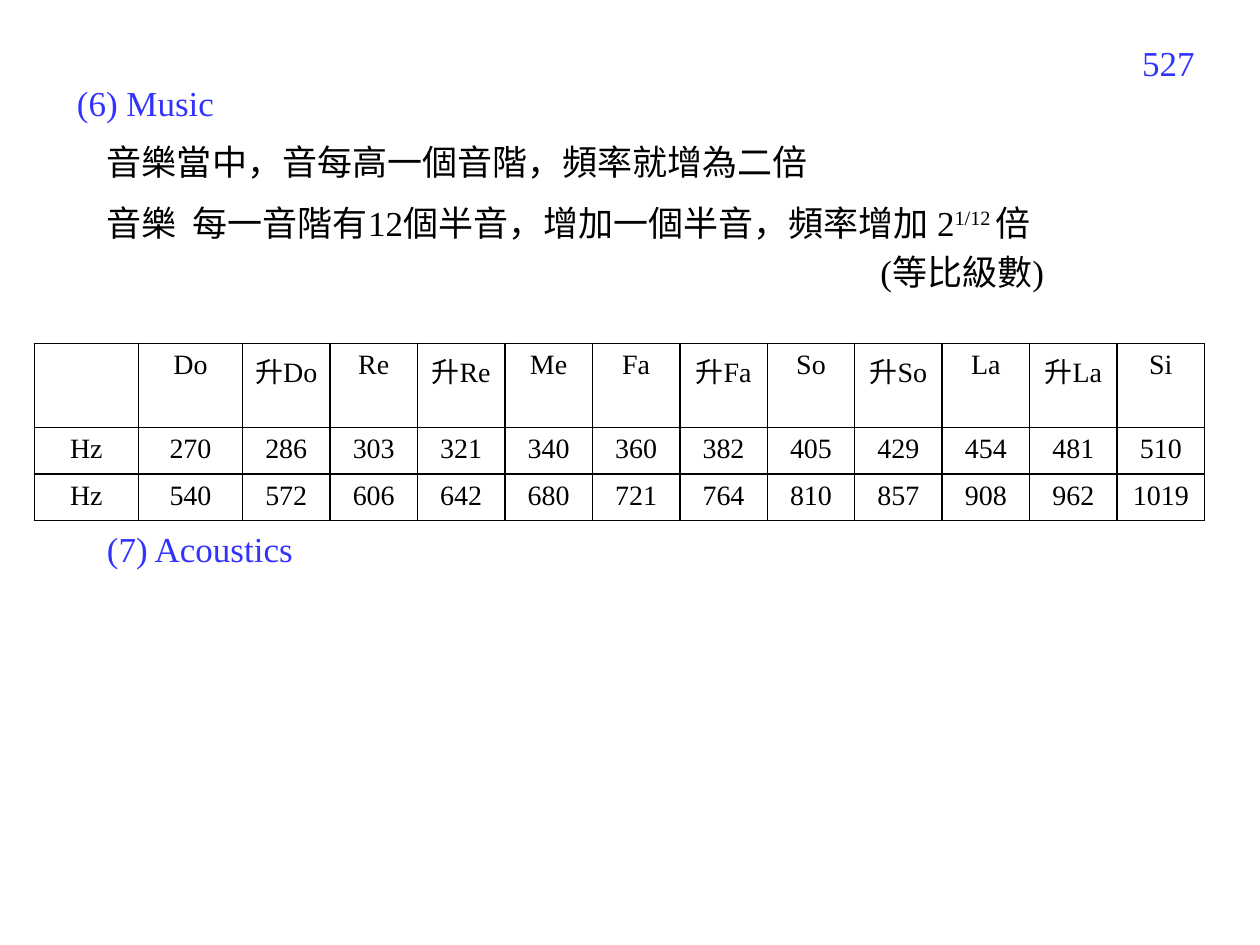
from dataclasses import dataclass

import pptx
import pptx.dml.color
import pptx.enum.text
import pptx.oxml
import pptx.oxml.ns
import pptx.util

Pt = pptx.util.Pt
Align = pptx.enum.text.PP_ALIGN
Anchor = pptx.enum.text.MSO_ANCHOR

FONT = "Times New Roman"
BLUE, BLACK = "3333FF", "000000"


@dataclass
class Note:
    """A text block; each run is its wording and its baseline shift in percent."""
    left: float
    top: float
    width: float
    height: float
    runs: list[tuple[str, int]]
    color: str = BLACK
    align: Align = Align.LEFT
    anchor: Anchor = Anchor.TOP


def rgb(color: str) -> pptx.dml.color.RGBColor:
    return pptx.dml.color.RGBColor.from_string(color)


def add_run(paragraph, wording: str, size: float, color: str, baseline: int = 0) -> None:
    run = paragraph.add_run()
    run.text = wording
    run.font.name = FONT
    run.font.size = Pt(size)
    run.font.color.rgb = rgb(color)
    if baseline:
        run.font._element.set("baseline", str(baseline * 1000))


def write_note(shape, note: Note) -> None:
    shape.left, shape.top = Pt(note.left), Pt(note.top)
    shape.width, shape.height = Pt(note.width), Pt(note.height)
    frame = shape.text_frame
    frame.word_wrap = True
    frame.auto_size = pptx.enum.text.MSO_AUTO_SIZE.NONE
    frame.vertical_anchor = note.anchor
    paragraph = frame.paragraphs[0]
    paragraph.alignment = note.align
    for wording, baseline in note.runs:
        add_run(paragraph, wording, 20, note.color, baseline)


def add_note(slide, note: Note) -> None:
    write_note(slide.shapes.add_textbox(0, 0, 0, 0), note)


def outline_cell(cell, color: str, width: float) -> None:
    properties = cell._tc.get_or_add_tcPr()
    for position, side in enumerate(("lnL", "lnR", "lnT", "lnB")):
        properties.insert(position, pptx.oxml.parse_xml(
            f'<a:{side} {pptx.oxml.ns.nsdecls("a")} w="{int(Pt(width))}">'
            f'<a:solidFill><a:srgbClr val="{color}"/></a:solidFill></a:{side}>'))


def add_grid(slide, left: float, top: float, widths: list[float],
             row_height: float, rows: list[list]) -> None:
    table = slide.shapes.add_table(
        len(rows), len(widths), Pt(left), Pt(top),
        Pt(sum(widths)), Pt(row_height * len(rows))).table
    table.first_row = table.horz_banding = False
    for column, width in zip(table.columns, widths):
        column.width = Pt(width)
    for row_index, row in enumerate(rows):
        table.rows[row_index].height = Pt(row_height)
        for column_index, entry in enumerate(row):
            cell = table.cell(row_index, column_index)
            cell.fill.background()
            outline_cell(cell, BLACK, 1)
            paragraph = cell.text_frame.paragraphs[0]
            paragraph.alignment = Align.CENTER
            if entry != "":
                add_run(paragraph, str(entry), 16, BLACK)


TITLE = Note(36.7, 43.2, 425.5, 31, [("(6) Music", 0)], BLUE)
NOTES = [
    Note(626.4, 20.2, 63.4, 37.4, [("527", 0)], BLUE, Align.RIGHT),
    Note(54, 77, 470, 31, [("音樂當中，音每高一個音階，頻率就增為二倍", 0)]),
    Note(54, 111.6, 545, 31,
         [("音樂  每一音階有12個半音，增加一個半音，頻率增加 2", 0), ("1/12 ", 30), ("倍", 0)],
         anchor=Anchor.MIDDLE),
    Note(496, 139.7, 147.6, 31, [("(等比級數)", 0)]),
    Note(54, 298, 425.5, 31, [("(7) Acoustics", 0)], BLUE),
]
SCALE = [
    ["", "Do", "升Do", "Re", "升Re", "Me", "Fa", "升Fa", "So", "升So", "La", "升La", "Si"],
    ["Hz", 270, 286, 303, 321, 340, 360, 382, 405, 429, 454, 481, 510],
    ["Hz", 540, 572, 606, 642, 680, 721, 764, 810, 857, 908, 962, 1019],
]


def main() -> None:
    deck = pptx.Presentation()
    deck.slide_width, deck.slide_height = Pt(720), Pt(540)
    slide = deck.slides.add_slide(deck.slide_layouts[5])

    # Heading and explanations
    write_note(slide.shapes.title, TITLE)
    for note in NOTES:
        add_note(slide, note)

    # Frequencies of two octaves
    add_grid(slide, 19.6, 196.3, [59.5] * 2 + [50] * 11, 26.5, SCALE)

    deck.save("out.pptx")


if __name__ == "__main__":
    main()
